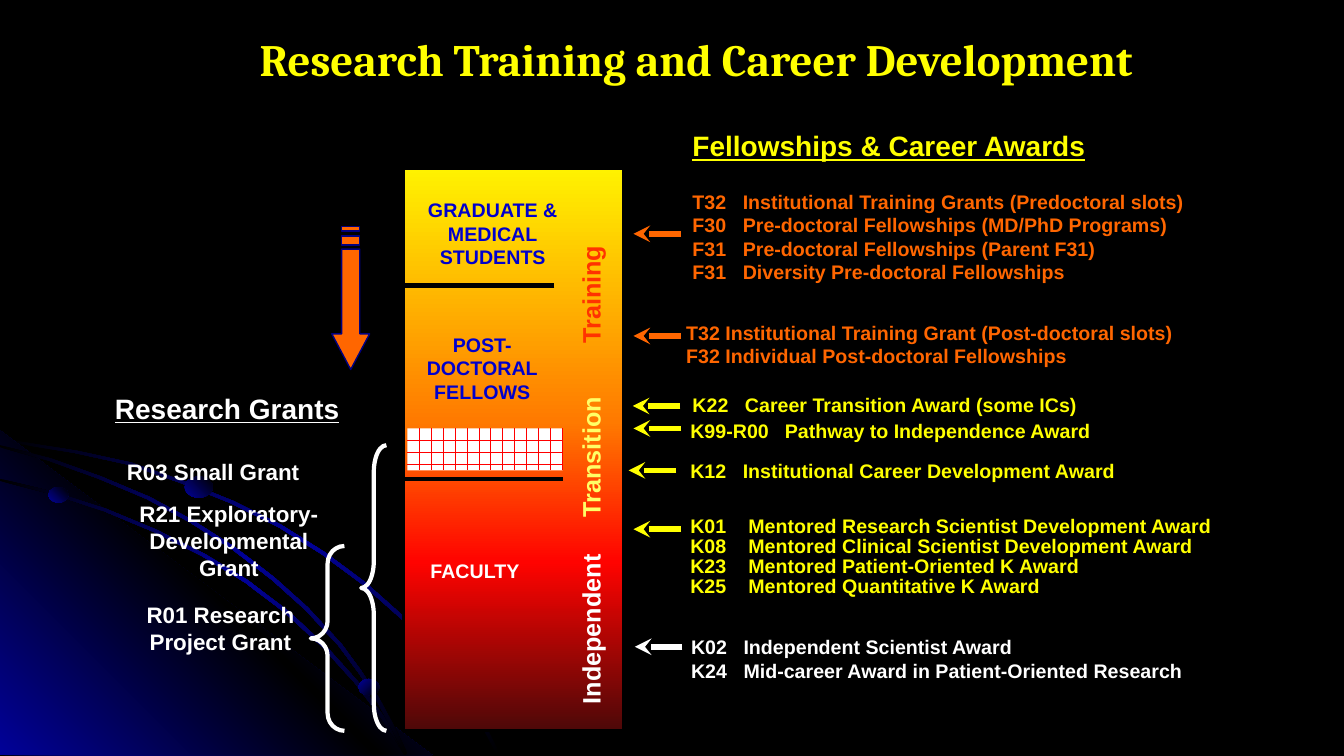
from lxml import etree
from pptx import Presentation
from pptx.dml.color import RGBColor
from pptx.enum.dml import MSO_PATTERN
from pptx.enum.shapes import MSO_CONNECTOR, MSO_SHAPE
from pptx.enum.text import MSO_ANCHOR, PP_ALIGN
from pptx.oxml.ns import qn
from pptx.util import Pt

BLACK, WHITE, YELLOW, ORANGE = "000000", "FFFFFF", "FFFF00", "FF6600"
NAVY, LABEL_BLUE, GLOW = "000080", "0000CC", "010199"
ARC_STOPS = [(0, BLACK), (50, GLOW), (100, BLACK)]


def rgb(value):
    return RGBColor.from_string(value)


class Painter:
    """Draws styled elements on one slide; all lengths are in points."""

    font = "Arial"

    def __init__(self, page):
        self.page = page
        self.page.background.fill.solid()
        self.page.background.fill.fore_color.rgb = rgb(BLACK)

    def finish(self, shape, fill=None, line=None, weight=1):
        shape.shadow.inherit = False
        if fill:
            shape.fill.solid()
            shape.fill.fore_color.rgb = rgb(fill)
        else:
            shape.fill.background()
        if line:
            shape.line.color.rgb = rgb(line)
            shape.line.width = Pt(weight)
        else:
            shape.line.fill.background()
        return shape

    def shape(self, kind, left, top, width, height, **style):
        shape = self.page.shapes.add_shape(kind, Pt(left), Pt(top), Pt(width), Pt(height))
        return self.finish(shape, **style)

    def outline(self, contours, **style):
        """Draw closed polygons as a single shape."""
        builder = None
        for contour in contours:
            start, *rest = [(Pt(x), Pt(y)) for x, y in contour]
            if builder is None:
                builder = self.page.shapes.build_freeform(*start)
            else:
                builder.move_to(*start)
            builder.add_line_segments(rest, close=True)
        return self.finish(builder.convert_to_shape(), **style)

    def gradient(self, shape, stops, angle):
        """Fill with (percent, colour) stops; the angle runs clockwise."""
        shape.fill.gradient()
        shape.fill.gradient_angle = (360 - angle) % 360
        stop_list = shape._element.spPr.find(qn("a:gradFill")).find(qn("a:gsLst"))
        for old in list(stop_list):
            stop_list.remove(old)
        for percent, colour in stops:
            stop = etree.SubElement(stop_list, qn("a:gs"), pos=str(percent * 1000))
            etree.SubElement(stop, qn("a:srgbClr"), val=colour)

    def line(self, start, end, colour, weight, arrow=False):
        points = [Pt(value) for value in (*start, *end)]
        line = self.page.shapes.add_connector(MSO_CONNECTOR.STRAIGHT, *points)
        line.line.color.rgb = rgb(colour)
        line.line.width = Pt(weight)
        if arrow:
            etree.SubElement(line.line._get_or_add_ln(), qn("a:tailEnd"), type="stealth")
        etree.SubElement(line._element.spPr, qn("a:effectLst"))

    def text(self, left, top, width, height, lines, size, colour, align=PP_ALIGN.LEFT,
             font=None, underline=False, wrap=True, spacing=None, tab=None):
        box = self.page.shapes.add_textbox(Pt(left), Pt(top), Pt(width), Pt(height))
        frame = box.text_frame
        frame.word_wrap = wrap
        for index, line in enumerate(lines):
            para = frame.paragraphs[0] if index == 0 else frame.add_paragraph()
            para.add_run().text = line
            para.alignment = align
            if spacing:
                para.line_spacing = spacing
            if tab:
                tabs = etree.SubElement(para._p.get_or_add_pPr(), qn("a:tabLst"))
                etree.SubElement(tabs, qn("a:tab"), pos=str(Pt(tab)), algn="l")
            para.font.name = font or self.font
            para.font.size = Pt(size)
            para.font.bold = True
            para.font.underline = underline
            para.font.color.rgb = rgb(colour)
        return box


def draw_backdrop(painter):
    def arc(edge):
        inner = [(max(0, x - 2), y + 1.5) for x, y in reversed(edge)]
        painter.gradient(painter.outline([edge + inner]), ARC_STOPS, 45)

    arc([(0, 313), (27, 317.5), (55, 322), (94, 330.5), (131, 343.5), (167, 358),
         (201, 375), (232, 394.5), (261, 416), (288, 440), (312, 466.5),
         (326, 484.5), (338, 502.5), (348, 520.5), (357, 538)])
    corner = painter.outline([[(309, 539.5), (0, 539.5), (0, 307.5)]])
    painter.gradient(corner, [(0, GLOW), (50, BLACK), (100, GLOW)], 315)
    arc([(0, 342), (39, 351.5), (76, 363.5), (112, 378.5), (146, 395.5), (177, 414.5),
         (206, 436.5), (232.5, 461), (255.5, 486.5), (275, 512.5), (283.5, 525.5), (291, 538)])
    arc([(0, 318), (36.5, 327.5), (72.5, 340.5), (107, 355), (137.5, 371.5), (168, 391),
         (196, 412.5), (220, 434), (244, 460), (258, 479), (271, 499), (281.5, 518.5), (291, 538)])
    for left, top, width, height, angle in [(34.5, 348, 14.5, 11, 315),
                                            (256, 485, 15, 11.5, 45),
                                            (132, 340.5, 20, 15, 315)]:
        dot = painter.shape(MSO_SHAPE.OVAL, left, top, width, height)
        painter.gradient(dot, [(0, GLOW), (100, BLACK)], angle)


def draw_career_column(painter):
    column = painter.shape(MSO_SHAPE.RECTANGLE, 288, 120.5, 157.5, 401.5, line=BLACK, weight=2)
    painter.gradient(column, [(0, "FFF200"), (45, "FF7A00"), (70, "FF0300"), (100, "4D0808")], 90)
    for right, y in [(396, 204), (402, 342)]:
        painter.line((right, y), (288, y), BLACK, 3)
    bricks = painter.shape(MSO_SHAPE.RECTANGLE, 291, 306, 111, 30)
    bricks.fill.patterned()
    bricks.fill.pattern = MSO_PATTERN.HORIZONTAL_BRICK
    bricks.fill.fore_color.rgb = rgb("FF0000")
    bricks.fill.back_color.rgb = rgb(WHITE)
    for left, top, width, lines, colour in [
            (298, 138, 108, ["GRADUATE &", "MEDICAL", "STUDENTS"], LABEL_BLUE),
            (297.5, 234, 94, ["POST-", "DOCTORAL", "FELLOWS"], LABEL_BLUE),
            (300, 396, 78.5, ["FACULTY"], WHITE)]:
        painter.text(left, top, width, 7.2 + 17 * len(lines), lines, 14, colour,
                     PP_ALIGN.CENTER, wrap=False)
    width, height = 130, 29
    for stage, middle, colour in [("Training", 210.5, "FF3300"), ("Transition", 326.5, "FFFF66"),
                                  ("Independent", 449.5, WHITE)]:
        box = painter.text(422 - width / 2, middle - height / 2, width, height, [stage],
                           18, colour, PP_ALIGN.CENTER, wrap=False)
        box.rotation = 270


def draw_awards(painter):
    painter.text(487.5, 88.5, 320, 32, ["Fellowships & Career Awards"], 20, YELLOW, underline=True)
    awards = [
        (487.5, 132, ORANGE, 36, None, (486.5, 167), [
            "T32\tInstitutional Training Grants (Predoctoral slots)",
            "F30\tPre-doctoral Fellowships (MD/PhD Programs)",
            "F31\tPre-doctoral Fellowships (Parent F31)",
            "F31\tDiversity Pre-doctoral Fellowships"]),
        (483, 225.5, ORANGE, None, None, (486.5, 240), [
            "T32 Institutional Training Grant (Post-doctoral slots)",
            "F32 Individual Post-doctoral Fellowships"]),
        (487.5, 279.5, YELLOW, 37.5, 0.85, (486, 290), [
            "K22\tCareer Transition Award (some ICs)"]),
        (486, 298, YELLOW, 67.5, 0.85, (486.5, 306), [
            "K99-R00\tPathway to Independence Award"]),
        (486, 327, YELLOW, 37.5, 0.85, (483, 336), [
            "K12\tInstitutional Career Development Award"]),
        (486, 366, YELLOW, 41.5, 0.85, (486.5, 378), [
            "K01\tMentored Research Scientist Development Award",
            "K08\tMentored Clinical Scientist Development Award",
            "K23\tMentored Patient-Oriented K Award",
            "K25\tMentored Quantitative K Award"]),
        (486.5, 450, WHITE, 37.5, None, (487.5, 462), [
            "K02\tIndependent Scientist Award",
            "K24\tMid-career Award in Patient-Oriented Research"]),
    ]
    for left, top, colour, tab, spacing, (x, y), lines in awards:
        painter.line((x, y), (x - 34, y), colour, 4, arrow=True)
        painter.text(left, top, 398, 7.2 + 17 * len(lines), lines, 14, colour,
                     spacing=spacing, tab=tab)


def draw_grants(painter):
    painter.text(75, 276, 207, 32, ["Research Grants"], 20, WHITE, underline=True)
    painter.text(83.5, 324, 152, 27, ["R03 Small Grant"], 16, WHITE)
    painter.text(75, 354, 177, 65.5, ["R21 Exploratory-", "Developmental", "Grant"],
                 16, WHITE, PP_ALIGN.CENTER)
    painter.text(88.5, 426, 138, 46, ["R01 Research Project Grant"], 16, WHITE, PP_ALIGN.CENTER)
    for left, top, width, height, curve in [(222, 390, 24, 132, 0.52), (258, 318, 18, 204, 1.06)]:
        brace = painter.shape(MSO_SHAPE.LEFT_BRACE, left, top, width, height,
                              line=WHITE, weight=3)
        brace.adjustments[0] = curve
    left, right = 244, 257
    stripes = [[(right, top), (left, top), (left, bottom), (right, bottom)]
               for top, bottom in [(168.5, 175), (162, 165)]]
    arrow = [(264, 238.5), (right, 238.5), (right, 178), (left, 178), (left, 238.5),
             (237, 238.5), (250.5, 264)]
    painter.outline([arrow] + stripes, fill=ORANGE, line=NAVY)


def main():
    deck = Presentation()
    deck.slide_width, deck.slide_height = Pt(960), Pt(540)
    painter = Painter(deck.slides.add_slide(deck.slide_layouts[6]))
    draw_backdrop(painter)
    draw_career_column(painter)
    draw_awards(painter)
    draw_grants(painter)
    title = painter.text(121, 18, 753, 48, ["Research Training and Career Development"],
                         32, YELLOW, PP_ALIGN.CENTER, font="Cambria")
    title.text_frame.vertical_anchor = MSO_ANCHOR.MIDDLE
    deck.save("out.pptx")


if __name__ == "__main__":
    main()
